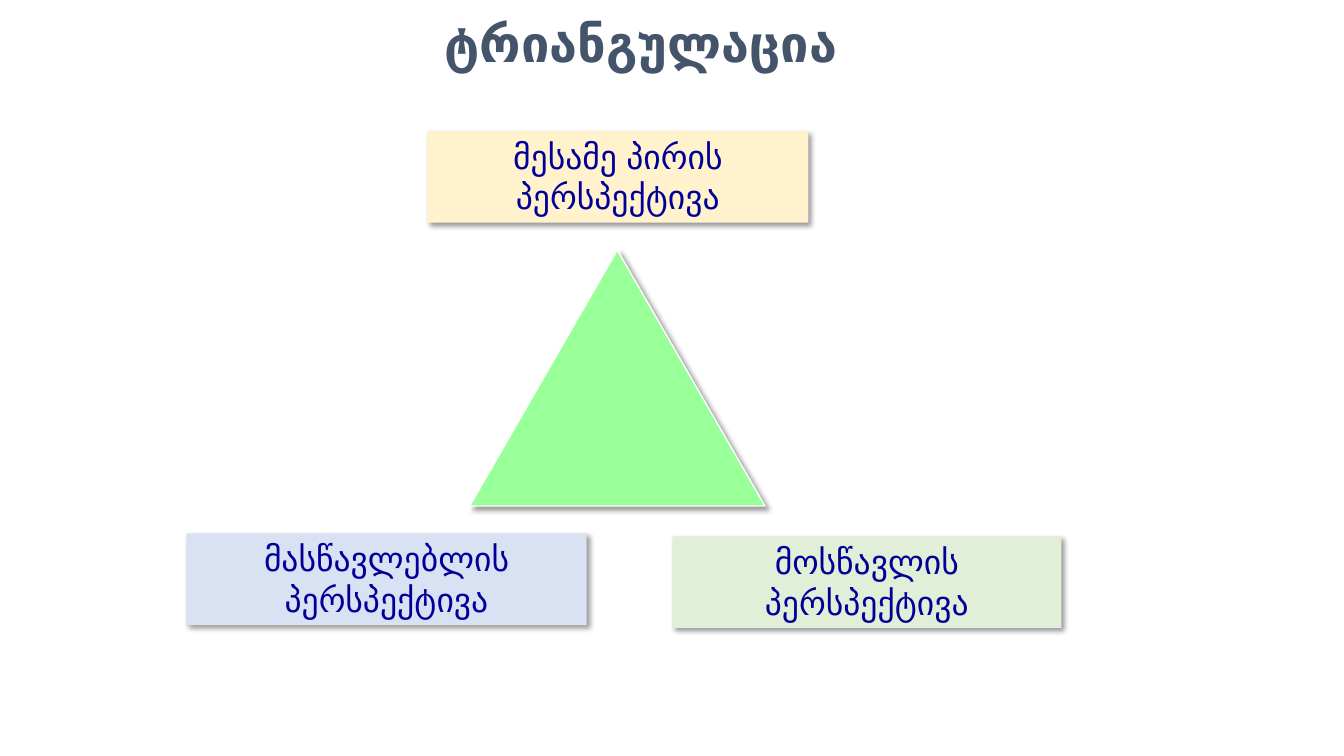
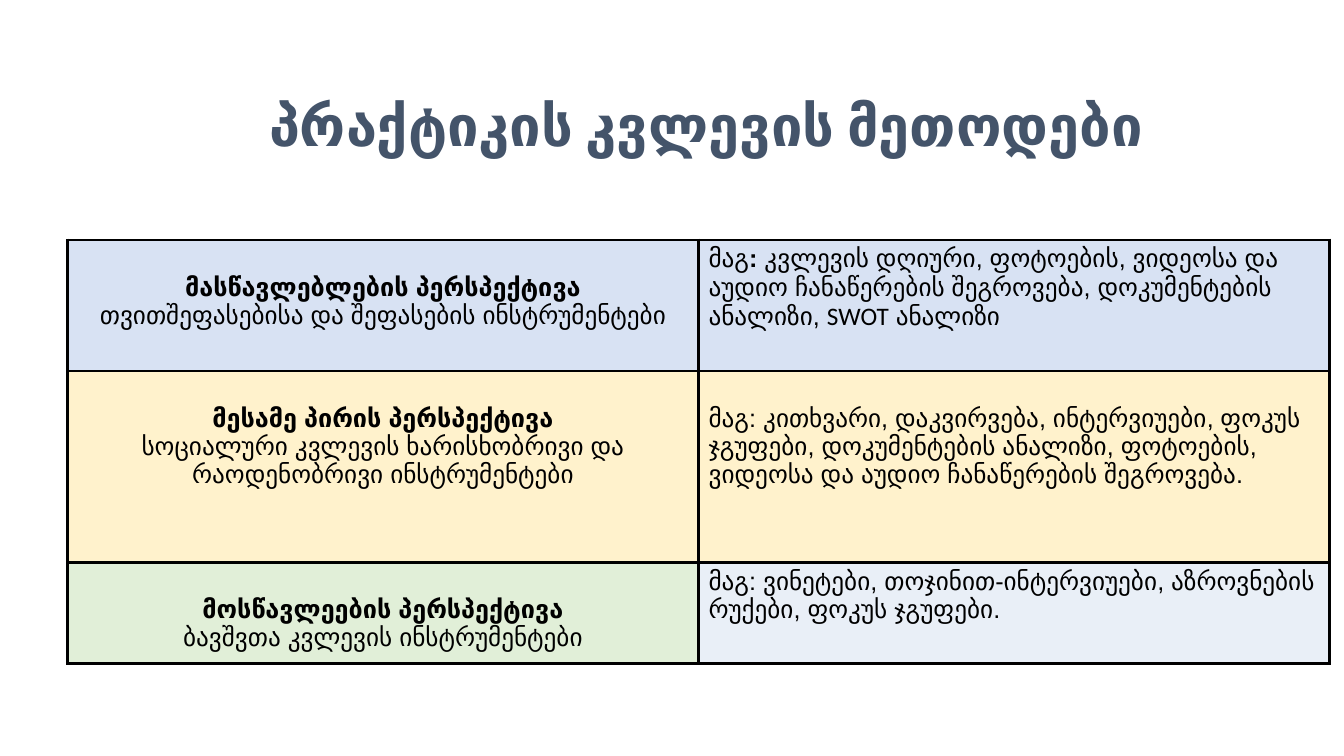
import dataclasses
import typing

import lxml.etree
import pptx
import pptx.dml.color
import pptx.enum.shapes
import pptx.enum.text
import pptx.oxml
import pptx.oxml.ns
import pptx.util

RGBColor = pptx.dml.color.RGBColor
Shapes = pptx.enum.shapes.MSO_SHAPE
Align = pptx.enum.text.PP_ALIGN
Anchor = pptx.enum.text.MSO_ANCHOR

SLATE = RGBColor(0x44, 0x54, 0x6A)
NAVY = RGBColor(0x00, 0x00, 0x99)
BLACK = RGBColor(0x00, 0x00, 0x00)
WHITE = RGBColor(0xFF, 0xFF, 0xFF)
LIME = RGBColor(0x99, 0xFF, 0x99)
BLUE = RGBColor(0xD8, 0xE2, 0xF3)
GREEN = RGBColor(0xE1, 0xEF, 0xD8)
CREAM = RGBColor(0xFF, 0xF2, 0xCC)
PALE = RGBColor(0xE9, 0xEF, 0xF7)

WIDTH, HEIGHT = pptx.util.Inches(13.33), pptx.util.Inches(7.5)
COLUMNS, ROWS = 160, 90
BORDER = pptx.util.Pt(2.2)
TOP_MARGIN = pptx.util.Inches(0.05)
LINE_DOWN = pptx.util.Inches(0.33)

TITLE_FONT = {"name": "Calibri", "bold": True}
LABEL_FONT = {"name": "Arial", "size": pptx.util.Pt(24)}
CELL_FONT = {"name": "Arial", "size": pptx.util.Pt(18)}
BOLD = {"bold": True}
LATIN = {"name": "Calibri"}

SHADOW = (
    f'<a:effectLst {pptx.oxml.ns.nsdecls("a")}>'
    '<a:outerShdw blurRad="50800" dist="38100" dir="2700000" algn="tl" rotWithShape="0">'
    '<a:srgbClr val="000000"><a:alpha val="40000"/></a:srgbClr>'
    "</a:outerShdw></a:effectLst>"
)


@dataclasses.dataclass(frozen=True)
class Area:
    column: float
    row: float
    columns: float
    rows: float

    def lengths(self) -> tuple[int, int, int, int]:
        return across(self.column), down(self.row), across(self.columns), down(self.rows)


@dataclasses.dataclass(frozen=True)
class Span:
    text: str
    format: dict[str, typing.Any] = dataclasses.field(default_factory=dict)


@dataclasses.dataclass(frozen=True)
class Panel:
    area: Area
    fill: RGBColor
    text: str = ""
    shape: typing.Any = Shapes.RECTANGLE
    line: RGBColor | None = None


@dataclasses.dataclass(frozen=True)
class Cell:
    paragraphs: list[list[Span]]
    fill: RGBColor
    align: typing.Any = Align.LEFT
    top: int = TOP_MARGIN


def across(columns: float) -> int:
    return round(WIDTH * columns / COLUMNS)


def down(rows: float) -> int:
    return round(HEIGHT * rows / ROWS)


def apply(target: typing.Any, format: dict[str, typing.Any]) -> None:
    for name, value in format.items():
        setattr(target, name, value)


def write(para: typing.Any, spans: list[Span], font: dict[str, typing.Any],
          color: RGBColor, align: typing.Any) -> None:
    para.alignment = align
    for span in spans:
        run = para.add_run()
        run.text = span.text
        apply(run.font, font | span.format)
        run.font.color.rgb = color


def add_page(deck: typing.Any, title: str, area: Area, size: int) -> typing.Any:
    page = deck.slides.add_slide(deck.slide_layouts.get_by_name("Title Only"))
    box = page.shapes.title
    apply(box, dict(zip(("left", "top", "width", "height"), area.lengths())))
    apply(box.text_frame, {
        "word_wrap": True,
        "auto_size": pptx.enum.text.MSO_AUTO_SIZE.NONE,
        "vertical_anchor": Anchor.MIDDLE,
    })
    para = box.text_frame.paragraphs[0]
    para.line_spacing = 0.9
    write(para, [Span(title)], TITLE_FONT | {"size": pptx.util.Pt(size)}, SLATE, Align.LEFT)
    return page


def add_panel(page: typing.Any, panel: Panel) -> None:
    box = page.shapes.add_shape(panel.shape, *panel.area.lengths())
    box.fill.solid()
    box.fill.fore_color.rgb = panel.fill
    if panel.line is None:
        box.line.fill.background()
    else:
        box.line.color.rgb = panel.line
        box.line.width = pptx.util.Pt(1)
    box._element.spPr.append(pptx.oxml.parse_xml(SHADOW))
    if panel.text:
        apply(box.text_frame, {"word_wrap": True, "vertical_anchor": Anchor.TOP})
        write(box.text_frame.paragraphs[0], [Span(panel.text)], LABEL_FONT, NAVY, Align.CENTER)


def add_borders(box: typing.Any) -> None:
    properties = box._tc.get_or_add_tcPr()
    qn = pptx.oxml.ns.qn
    for edge in ("a:lnL", "a:lnR", "a:lnT", "a:lnB"):
        line = lxml.etree.SubElement(properties, qn(edge), w=str(BORDER))
        fill = lxml.etree.SubElement(line, qn("a:solidFill"))
        lxml.etree.SubElement(fill, qn("a:srgbClr"), val=str(BLACK))


def fill_cell(box: typing.Any, cell: Cell) -> None:
    add_borders(box)
    box.fill.solid()
    box.fill.fore_color.rgb = cell.fill
    apply(box, {"margin_top": cell.top, "vertical_anchor": Anchor.TOP})
    for index, spans in enumerate(cell.paragraphs):
        frame = box.text_frame
        para = frame.add_paragraph() if index else frame.paragraphs[0]
        write(para, spans, CELL_FONT, BLACK, cell.align)


def add_table(page: typing.Any, area: Area, heights: list[float], grid: list[list[Cell]]) -> None:
    table = page.shapes.add_table(len(grid), len(grid[0]), *area.lengths()).table
    apply(table, {"first_row": False, "horz_banding": False})
    for row, height, cells in zip(table.rows, heights, grid):
        row.height = down(height)
        for box, cell in zip(row.cells, cells):
            fill_cell(box, cell)


def heading(title: str, detail: str, fill: RGBColor) -> Cell:
    return Cell([[Span(title, BOLD)], [Span(detail)]], fill, Align.CENTER, LINE_DOWN)


PANELS = [
    Panel(Area(55.92, 29.76, 35.16, 30.48), LIME, shape=Shapes.ISOSCELES_TRIANGLE, line=WHITE),
    Panel(Area(22.2, 63.5, 47.64, 10.92), BLUE, "მასწავლებლის პერსპექტივა"),
    Panel(Area(80.04, 63.84, 46.32, 10.92), GREEN, "მოსწავლის პერსპექტივა"),
    Panel(Area(50.88, 15.6, 45.36, 10.92), CREAM, "მესამე პირის პერსპექტივა"),
]

ROW_HEIGHTS = [15.6, 22.8, 12]
METHODS = [
    [
        heading("მასწავლებლების პერსპექტივა", "თვითშეფასებისა და შეფასების ინსტრუმენტები", BLUE),
        Cell([[
            Span("მაგ"),
            Span(":", BOLD),
            Span(" კვლევის დღიური, ფოტოების, ვიდეოსა და აუდიო ჩანაწერების შეგროვება, "
                 "დოკუმენტების ანალიზი, "),
            Span("SWOT", LATIN),
            Span(" ანალიზი"),
        ]], BLUE),
    ],
    [
        heading("მესამე პირის პერსპექტივა",
                "სოციალური კვლევის ხარისხობრივი და რაოდენობრივი ინსტრუმენტები", CREAM),
        Cell([[Span("მაგ: კითხვარი, დაკვირვება, ინტერვიუები, ფოკუს ჯგუფები, დოკუმენტების ანალიზი, "
                    "ფოტოების, ვიდეოსა და აუდიო ჩანაწერების შეგროვება.")]], CREAM, top=LINE_DOWN),
    ],
    [
        heading("მოსწავლეების პერსპექტივა", "ბავშვთა კვლევის ინსტრუმენტები", GREEN),
        Cell([[Span("მაგ: ვინეტები, თოჯინით-ინტერვიუები, აზროვნების რუქები, "
                    "ფოკუს ჯგუფები.")]], PALE),
    ],
]


def main() -> None:
    deck = pptx.Presentation()
    apply(deck, {"slide_width": WIDTH, "slide_height": HEIGHT})

    page = add_page(deck, "ტრიანგულაცია", Area(51.72, 2.28, 100.92, 6.36), 36)
    for panel in PANELS:
        add_panel(page, panel)

    page = add_page(deck, "პრაქტიკის კვლევის მეთოდები", Area(30.84, 11.04, 117.36, 8.52), 40)
    add_table(page, Area(8.04, 28.56, 150.24, sum(ROW_HEIGHTS)), ROW_HEIGHTS, METHODS)

    deck.save("out.pptx")


if __name__ == "__main__":
    main()
